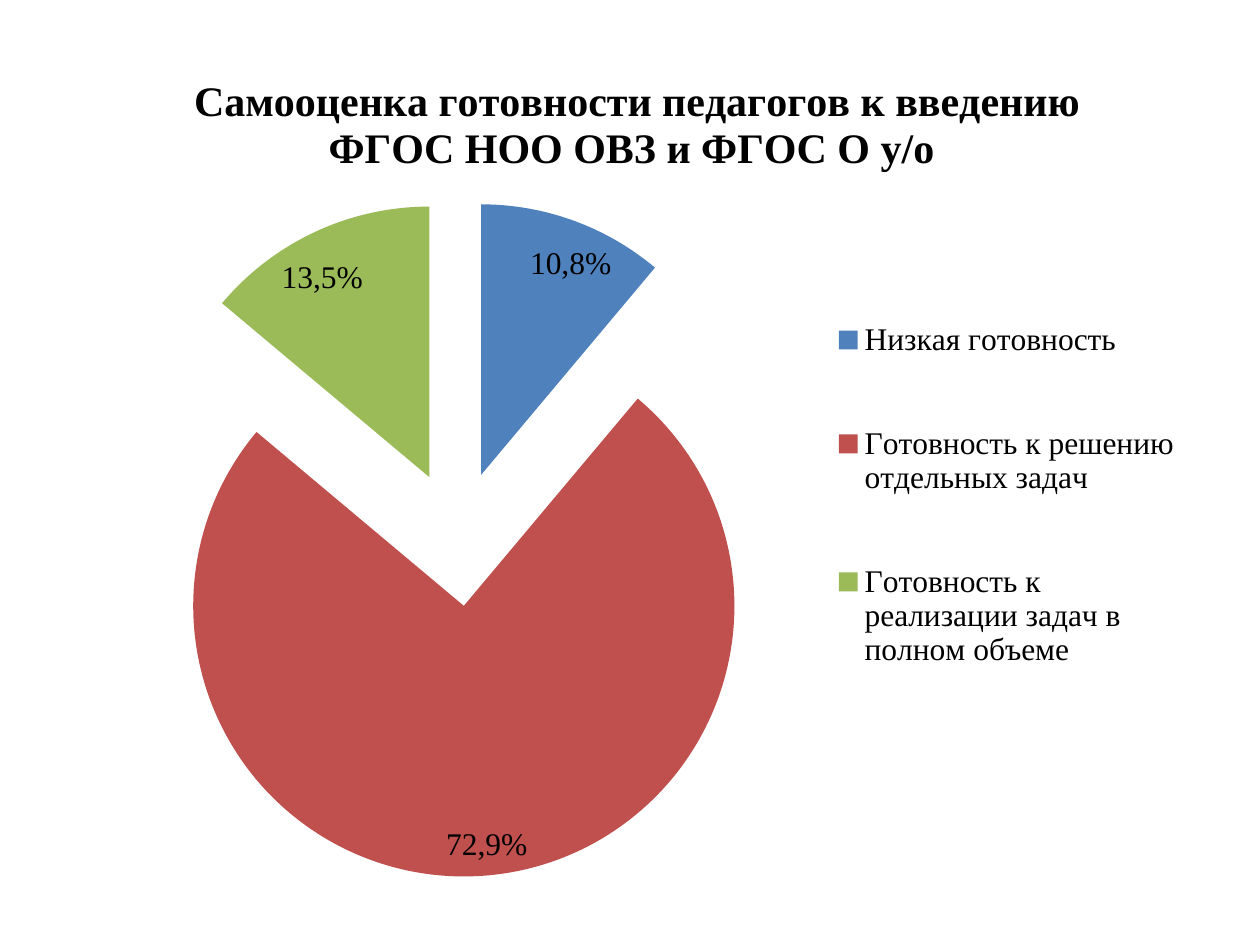
from dataclasses import dataclass

from lxml.etree import SubElement
from pptx import Presentation
from pptx.chart.data import CategoryChartData
from pptx.dml.color import RGBColor
from pptx.enum.chart import XL_CHART_TYPE, XL_LABEL_POSITION, XL_LEGEND_POSITION
from pptx.oxml.ns import qn
from pptx.util import Inches, Pt


@dataclass(frozen=True)
class Theme:
    font: str = "Times New Roman"
    text: RGBColor = RGBColor(0, 0, 0)
    title_size: Pt = Pt(24)
    body_size: Pt = Pt(18)


THEME = Theme()
CHART_WIDTH, CHART_HEIGHT = Inches(9), Inches(6.65)
TITLE = "Самооценка готовности педагогов к введению ФГОС НОО ОВЗ и ФГОС О у/о "
# Answer, share, caption, slice colour, caption shift in inches
ANSWERS = [
    ("Низкая готовность", 0.108, "10,8%", "4F81BD", (0.32, 0.15)),
    ("Готовность к решению отдельных задач", 0.729, "72,9%", "C0504D", (0, -0.05)),
    ("Готовность к реализации задач в полном объеме", 0.135, "13,5%", "9BBB59",
     (-0.29, 0.18)),
]


def style(font, size, bold=False):
    font.name = THEME.font
    font.size = size
    font.bold = bold
    font.color.rgb = THEME.text


def place(element, after, modes=("xMode", "yMode"), **inches):
    """Lay out a chart part by hand, in inches within the chart."""
    for old in element.findall(qn("c:layout")):
        element.remove(old)
    layout = SubElement(element, qn("c:layout"))
    if after is None:
        element.insert(0, layout)
    else:
        element.find(qn(after)).addnext(layout)
    manual = SubElement(layout, qn("c:manualLayout"))
    if element.tag == qn("c:plotArea"):
        SubElement(manual, qn("c:layoutTarget")).set("val", "inner")
    for mode in modes:
        SubElement(manual, qn(f"c:{mode}")).set("val", "edge")
    for side, length in inches.items():
        whole = CHART_WIDTH if side in "xw" else CHART_HEIGHT
        SubElement(manual, qn(f"c:{side}")).set("val", str(Inches(length) / whole))


deck = Presentation()
deck.slide_width, deck.slide_height = Inches(10), Inches(7.5)
slide = deck.slides.add_slide(deck.slide_layouts[6])

data = CategoryChartData(number_format="0.0%")
data.categories = [answer for answer, *_ in ANSWERS]
data.add_series(TITLE, [share for _, share, *_ in ANSWERS])
chart = slide.shapes.add_chart(
    XL_CHART_TYPE.PIE_EXPLODED,
    Inches(0.43), Inches(0.36), CHART_WIDTH, CHART_HEIGHT, data,
).chart
chart.font.name = "Calibri"
chart.font.size = Pt(10)
chart.font.color.rgb = THEME.text

# Title
chart.has_title = True
title = chart.chart_title.text_frame.paragraphs[0].add_run()
title.text = TITLE
style(title.font, THEME.title_size, bold=True)
place(chart.chart_title._element, "c:tx", x=1.05, y=0.16)

# Legend
chart.has_legend = True
legend = chart.legend
legend.position = XL_LEGEND_POSITION.RIGHT
legend.include_in_layout = False
style(legend.font, THEME.body_size)
place(legend._element, "c:legendPos", x=6.21, y=1.65, w=2.8, h=3.84)

# Pie
pie = chart.plots[0]
pie.vary_by_categories = True
place(chart._chartSpace.chart.plotArea, None, x=0.52, y=1.2, w=5.37, h=5.43)
shares = pie.series[0]
shares._element.find(qn("c:explosion")).set("val", "25")
labels = shares.data_labels
labels.show_value = True
labels.show_percentage = False
labels.number_format = "0.00%"
labels.number_format_is_linked = False
style(labels.font, THEME.body_size, bold=True)

for index, (_, _, caption, color, (right, down)) in enumerate(ANSWERS):
    point = shares.points[index]
    point.format.fill.solid()
    point.format.fill.fore_color.rgb = RGBColor.from_string(color)
    label = point.data_label
    run = label.text_frame.paragraphs[0].add_run()
    run.text = caption
    style(run.font, THEME.body_size)
    label.position = XL_LABEL_POSITION.INSIDE_END
    place(labels._element.findall(qn("c:dLbl"))[index], "c:idx", modes=(),
          x=right, y=down)

deck.save("out.pptx")
